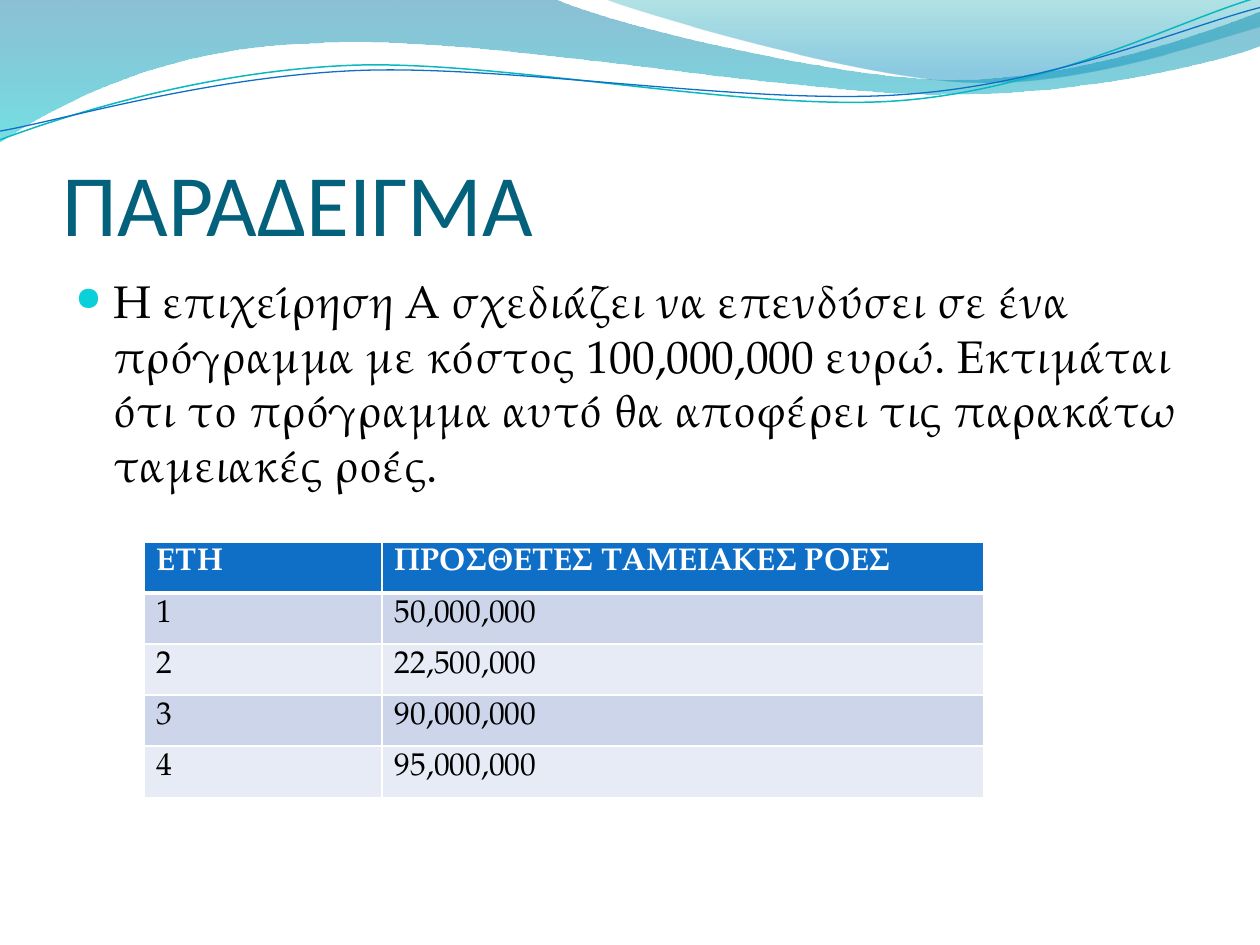
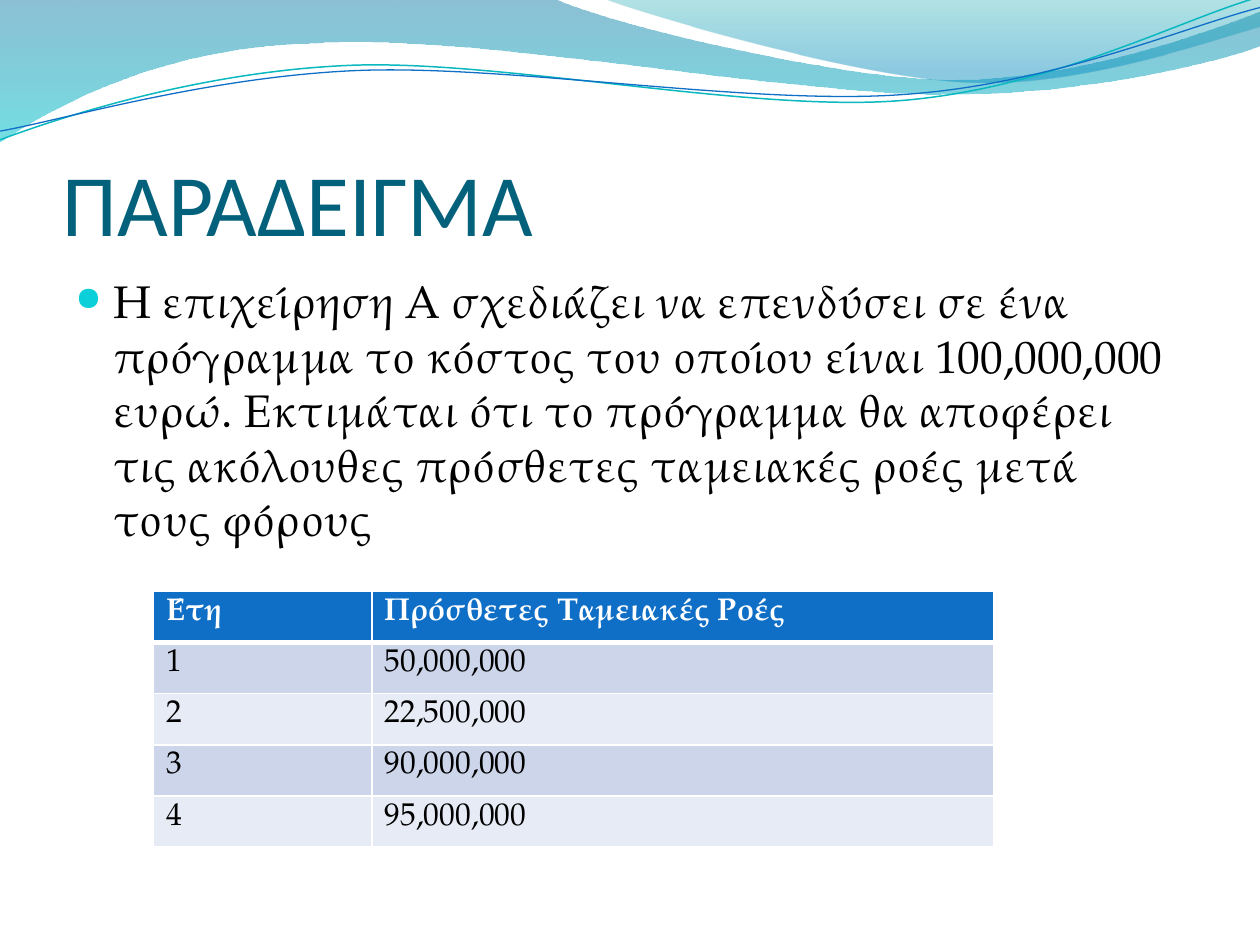
"""Build two example slides: a wave header, a bulleted statement and a cash-flow table."""
from lxml.etree import SubElement
from pptx import Presentation
from pptx.dml.color import RGBColor
from pptx.enum.text import MSO_ANCHOR as Anchor
from pptx.oxml import parse_xml
from pptx.oxml.ns import nsdecls, qn
from pptx.util import Pt

COLORS = {
    "title": "04617B", "text": "000000", "bullet": "0BD0D9", "white": "FFFFFF",
    "header": "0F6FC6", "band_dark": "CCD5EA", "band_light": "E7EBF5",
    "thread_teal": "0AB8BF", "thread_blue": "0F6FC6",
    "wave_top": "0074A1", "wave_bottom": "00C6CF",
    "crest_top": "00A1A9", "crest_bottom": "008BBF",
}
HEADING_FONT, BODY_FONT = "Calibri", "TeX Gyre Pagella"
SLIDE_SIZE = (720, 540)
TITLE = "ΠΑΡΑΔΕΙΓΜΑ"
TITLE_BOX = (36, 55.4, 648, 90)
BODY_BOX = (36, 152.6, 648, 345.6)
ROW_HEIGHT = 29.2
CASH_FLOWS = [("1", "50,000,000"), ("2", "22,500,000"),
              ("3", "90,000,000"), ("4", "95,000,000")]

EXAMPLES = [
    {"statement": "Η επιχείρηση Α σχεδιάζει να επενδύσει σε ένα πρόγραμμα με κόστος "
                  "100,000,000 ευρώ. Εκτιμάται ότι το πρόγραμμα αυτό θα αποφέρει τις "
                  "παρακάτω ταμειακές ροές.",
     "header": ("ΕΤΗ", "ΠΡΟΣΘΕΤΕΣ ΤΑΜΕΙΑΚΕΣ ΡΟΕΣ"),
     "position": (82.4, 309.6), "columns": (136, 344)},
    {"statement": "Η επιχείρηση Α σχεδιάζει να επενδύσει σε ένα πρόγραμμα το κόστος του "
                  "οποίου είναι 100,000,000 ευρώ. Εκτιμάται ότι το πρόγραμμα θα αποφέρει "
                  "τις ακόλουθες πρόσθετες ταμειακές ροές μετά τους φόρους",
     "header": ("Έτη", "Πρόσθετες Ταμειακές Ροές"),
     "position": (87.8, 338), "columns": (124.8, 355.2)},
]

# Two numbers draw a line to a point; six numbers draw a Bézier curve.
WAVES = [
    {"start": (0, 0),
     "segments": [(316.8, -0.7), (342.7, 12.2, 478.1, 45.4, 545.8, 45.4),
                  (614.2, 45.4, 689.8, 18.7, 720, 6.5), (720.7, 25.9),
                  (707.8, 31.7, 626.4, 54.7, 537.1, 54),
                  (447.8, 54, 275, 20.2, 185, 24.5),
                  (92.9, 25.9, 33.1, 59.8, -0.7, 81.4)],
     "stops": [(0, "wave_top", 45), (1, "wave_bottom", 55)]},
    {"start": (344.9, -0.7),
     "segments": [(366.5, 7.9, 491, 44.6, 553.7, 46.8),
                  (616.3, 49.7, 691.9, 23, 720, 15.1), (720, 0)],
     "stops": [(0, "crest_top", 30), (0.8, "crest_bottom", 45)]},
    {"start": (0, 79.9),
     "segments": [(34.6, 67, 113.8, 41, 199.4, 37.4),
                  (284.4, 33.8, 427, 64.1, 513.4, 57.6),
                  (599.8, 51.1, 675.4, 10.8, 718.6, -1.4)],
     "line": ("thread_teal", 0.85)},
    {"start": (0, 74.9),
     "segments": [(33.8, 69.1, 118.1, 43.9, 203.8, 40.3),
                  (290.2, 36.7, 429.8, 60.5, 516.2, 54),
                  (601.9, 48.2, 677.5, 15.1, 720, 4.3)],
     "line": ("thread_blue", 0.75)},
]


def rgb(name):
    return RGBColor.from_string(COLORS[name])


def bend_lines(shape, segments):
    outline = next(shape._element.iter(qn("a:path")))
    lines = iter(outline.findall(qn("a:lnTo")))
    for segment in segments:
        first = next(lines)
        if len(segment) == 6:
            first.tag = qn("a:cubicBezTo")
            for line in (next(lines), next(lines)):
                first.append(line[0])
                outline.remove(line)


def add_curve(slide, start, segments, closed):
    points = [tuple(map(Pt, segment[index:index + 2]))
              for segment in segments for index in range(0, len(segment), 2)]
    builder = slide.shapes.build_freeform(*map(Pt, start), scale=1)
    builder.add_line_segments(points, close=closed)
    shape = builder.convert_to_shape()
    shape.shadow.inherit = False
    bend_lines(shape, segments)
    return shape


def add_wave(slide, wave):
    shape = add_curve(slide, wave["start"], wave["segments"], "stops" in wave)
    if "line" in wave:
        color, width = wave["line"]
        shape.fill.background()
        shape.line.color.rgb, shape.line.width = rgb(color), Pt(width)
        return
    shape.line.fill.background()
    shape.fill.gradient()
    shape.fill.gradient_angle = 270
    for stop, (position, color, _) in zip(shape.fill.gradient_stops, wave["stops"]):
        stop.position, stop.color.rgb = position, rgb(color)
    for element, (_, _, opacity) in zip(shape._element.iter(qn("a:srgbClr")), wave["stops"]):
        SubElement(element, qn("a:alpha"), val=str(opacity * 1000))


def write(paragraph, text, color, **formats):
    run = paragraph.add_run()
    run.text = text
    run.font.color.rgb = rgb(color)
    for name, value in formats.items():
        setattr(run.font, name, value)


def add_text_frame(slide, box, **formats):
    frame = slide.shapes.add_textbox(*map(Pt, box)).text_frame
    for name, value in {"word_wrap": True, **formats}.items():
        setattr(frame, name, value)
    return frame


def add_title(slide):
    frame = add_text_frame(slide, TITLE_BOX, vertical_anchor=Anchor.BOTTOM, margin_left=0,
                           margin_top=Pt(3.6), margin_right=0, margin_bottom=0)
    write(frame.paragraphs[0], TITLE, "title", size=Pt(50), name=HEADING_FONT)


def add_statement(slide, text):
    paragraph = add_text_frame(slide, BODY_BOX).paragraphs[0]
    paragraph.space_before = Pt(5.2)
    properties = paragraph._p.get_or_add_pPr()
    properties.set("marL", str(Pt(21.6)))
    properties.set("indent", str(-Pt(21.6)))
    SubElement(SubElement(properties, qn("a:buClr")), qn("a:srgbClr"), val=COLORS["bullet"])
    SubElement(properties, qn("a:buSzPct"), val="73000")
    SubElement(properties, qn("a:buChar"), char="●")
    write(paragraph, text, "text", size=Pt(26), name=BODY_FONT)


def set_borders(cell, row_index):
    widths = {"L": 1, "R": 1, "T": 3 if row_index == 1 else 1, "B": 3 if row_index == 0 else 1}
    properties = cell._tc.get_or_add_tcPr()
    for index, (side, width) in enumerate(widths.items()):
        properties.insert(index, parse_xml(
            f'<a:ln{side} {nsdecls("a")} w="{Pt(width)}"><a:solidFill>'
            f'<a:srgbClr val="{COLORS["white"]}"/></a:solidFill></a:ln{side}>'))


def add_cash_flow_table(slide, example):
    rows = [example["header"], *CASH_FLOWS]
    columns = example["columns"]
    size = (sum(columns), ROW_HEIGHT * len(rows))
    table = slide.shapes.add_table(len(rows), len(columns),
                                   *map(Pt, example["position"] + size)).table
    for column, width in zip(table.columns, columns):
        column.width = Pt(width)
    for row_index, values in enumerate(rows):
        is_header = row_index == 0
        band = "header" if is_header else ("band_light", "band_dark")[row_index % 2]
        table.rows[row_index].height = Pt(ROW_HEIGHT)
        for column_index, value in enumerate(values):
            cell = table.cell(row_index, column_index)
            cell.fill.solid()
            cell.fill.fore_color.rgb = rgb(band)
            set_borders(cell, row_index)
            write(cell.text_frame.paragraphs[0], value, "white" if is_header else "text",
                  size=Pt(18), name=BODY_FONT, bold=is_header)


def main():
    presentation = Presentation()
    presentation.slide_width, presentation.slide_height = map(Pt, SLIDE_SIZE)
    for example in EXAMPLES:
        slide = presentation.slides.add_slide(presentation.slide_layouts[6])
        for wave in WAVES:
            add_wave(slide, wave)
        add_title(slide)
        add_statement(slide, example["statement"])
        add_cash_flow_table(slide, example)
    presentation.save("out.pptx")


if __name__ == "__main__":
    main()
